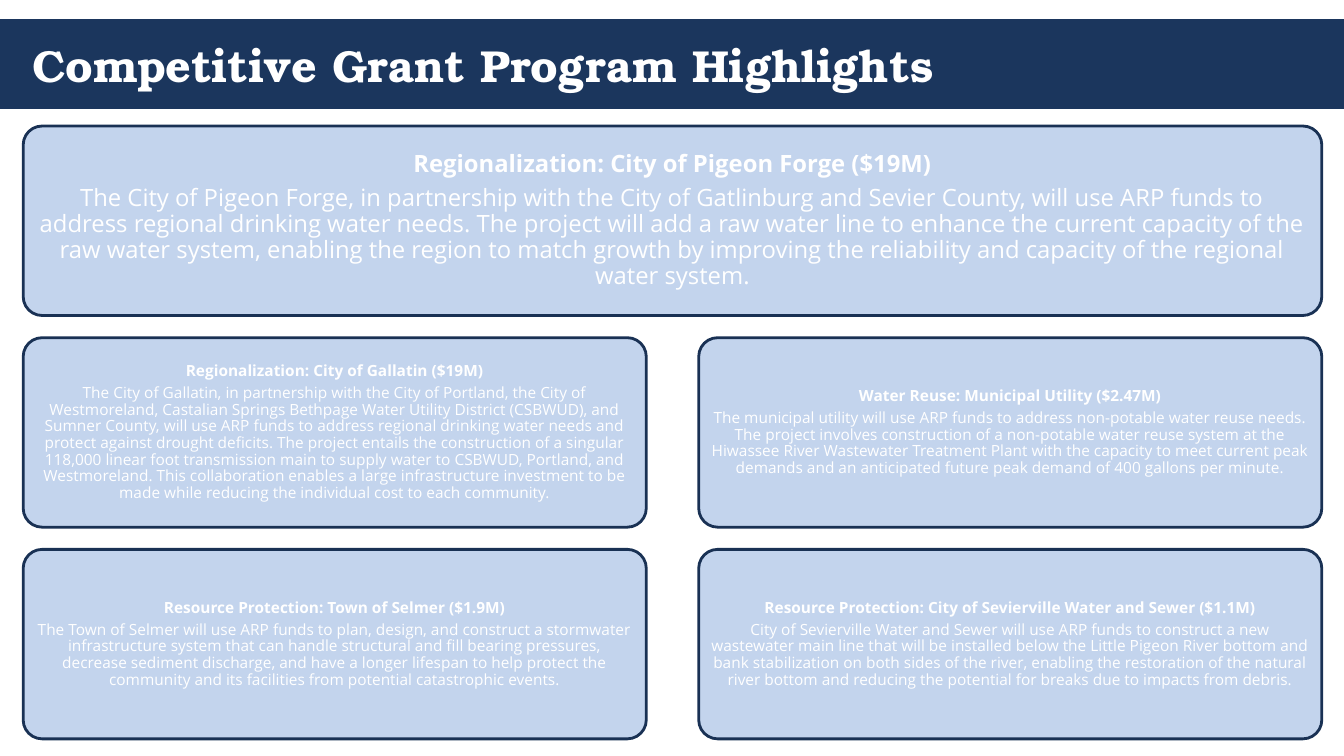
from pptx import Presentation
from pptx.dml.color import RGBColor
from pptx.enum import shapes, text
from pptx.util import Inches, Pt

COLORS = {"banner": "1B365D", "card": "C3D4ED", "border": "193154", "text": "FFFFFF"}
TITLE_FONT, BODY_FONT = "TeX Gyre Bonum", "Open Sans"

MARGIN, TOP = 0.23, 1.25
FULL_WIDTH, HALF_WIDTH, CARD_HEIGHT = 12.88, 6.18, 1.88
COLUMN_STEP, ROW_STEP = 6.7, 2.1
TEXT_INSET = 0.055

LEAD_GRANT = (
    "Regionalization: City of Pigeon Forge ($19M)",
    "The City of Pigeon Forge, in partnership with the City of Gatlinburg and Sevier County, "
    "will use ARP funds to address regional drinking water needs. The project will add a raw "
    "water line to enhance the current capacity of the raw water system, enabling the region to "
    "match growth by improving the reliability and capacity of the regional water system.",
)
GRANT_ROWS = [
    [
        (
            "Regionalization: City of Gallatin ($19M)",
            "The City of Gallatin, in partnership with the City of Portland, the City of "
            "Westmoreland, Castalian Springs Bethpage Water Utility District (CSBWUD), and Sumner "
            "County, will use ARP funds to address regional drinking water needs and protect "
            "against drought deficits. The project entails the construction of a singular 118,000 "
            "linear foot transmission main to supply water to CSBWUD, Portland, and Westmoreland. "
            "This collaboration enables a large infrastructure investment to be made while "
            "reducing the individual cost to each community.",
        ),
        (
            "Water Reuse: Municipal Utility ($2.47M)",
            "The municipal utility will use ARP funds to address non-potable water reuse needs. The "
            "project involves construction of a non-potable water reuse system at the Hiwassee "
            "River Wastewater Treatment Plant with the capacity to meet current peak demands and "
            "an anticipated future peak demand of 400 gallons per minute.",
        ),
    ],
    [
        (
            "Resource Protection: Town of Selmer ($1.9M)",
            "The Town of Selmer will use ARP funds to plan, design, and construct a stormwater "
            "infrastructure system that can handle structural and fill bearing pressures, "
            "decrease sediment discharge, and have a longer lifespan to help protect the "
            "community and its facilities from potential catastrophic events.",
        ),
        (
            "Resource Protection: City of Sevierville Water and Sewer ($1.1M)",
            "City of Sevierville Water and Sewer will use ARP funds to construct a new wastewater "
            "main line that will be installed below the Little Pigeon River bottom and bank "
            "stabilization on both sides of the river, enabling the restoration of the natural "
            "river bottom and reducing the potential for breaks due to impacts from debris.",
        ),
    ],
]


def color(name):
    return RGBColor.from_string(COLORS[name])


def add_span(para, words, font, size, bold):
    span = para.add_run()
    span.text = words
    span.font.name = font
    span.font.size = Pt(size)
    span.font.bold = bold
    span.font.color.rgb = color("text")


def add_panel(page, kind, left, top, width, height, fill):
    panel = page.shapes.add_shape(kind, Inches(left), Inches(top), Inches(width), Inches(height))
    panel.shadow.inherit = False
    panel.fill.solid()
    panel.fill.fore_color.rgb = color(fill)
    panel.line.fill.background()
    return panel


def add_title(page, words):
    """Place the title on a banner that spans the slide."""
    banner = add_panel(page, shapes.MSO_SHAPE.RECTANGLE, 0, 0.19, 13.33, 0.89, "banner")
    title = page.shapes.title
    title.element.addprevious(banner.element)
    title.left, title.top = Inches(0.22), Inches(0.19)
    title.width, title.height = Inches(12.89), Inches(0.9)
    frame = title.text_frame
    frame.auto_size = text.MSO_AUTO_SIZE.NONE
    frame.vertical_anchor = text.MSO_ANCHOR.MIDDLE
    para = frame.paragraphs[0]
    para.alignment = text.PP_ALIGN.LEFT
    add_span(para, words, TITLE_FONT, 32, True)


def add_card(page, grant, left, top, width, size, padding):
    """Draw a rounded card holding a grant's bold heading and its description."""
    card = add_panel(page, shapes.MSO_SHAPE.ROUNDED_RECTANGLE, left, top, width, CARD_HEIGHT, "card")
    card.adjustments[0] = 0.1
    card.line.color.rgb = color("border")
    card.line.width = Pt(2)

    box = page.shapes.add_textbox(
        Inches(left + TEXT_INSET), Inches(top + TEXT_INSET),
        Inches(width - 2 * TEXT_INSET), Inches(CARD_HEIGHT - 2 * TEXT_INSET),
    )
    frame = box.text_frame
    frame.word_wrap = True
    frame.vertical_anchor = text.MSO_ANCHOR.MIDDLE
    frame.margin_left = frame.margin_right = Inches(padding)
    frame.margin_top = frame.margin_bottom = Inches(padding)
    for index, words in enumerate(grant):
        para = frame.add_paragraph() if index else frame.paragraphs[0]
        para.alignment = text.PP_ALIGN.CENTER
        para.line_spacing = 0.9
        para.space_after = Pt(round(0.35 * size))
        add_span(para, words, BODY_FONT, size, index == 0)


def main():
    deck = Presentation()
    deck.slide_width, deck.slide_height = Inches(13.33), Inches(7.5)
    page = deck.slides.add_slide(deck.slide_layouts[5])
    add_title(page, "Competitive Grant Program Highlights")
    add_card(page, LEAD_GRANT, MARGIN, TOP, FULL_WIDTH, 17, 0.07)
    for row, grants in enumerate(GRANT_ROWS, start=1):
        for column, grant in enumerate(grants):
            left, top = MARGIN + column * COLUMN_STEP, TOP + row * ROW_STEP
            add_card(page, grant, left, top, HALF_WIDTH, 11, 0.05)
    deck.save("out.pptx")


if __name__ == "__main__":
    main()
